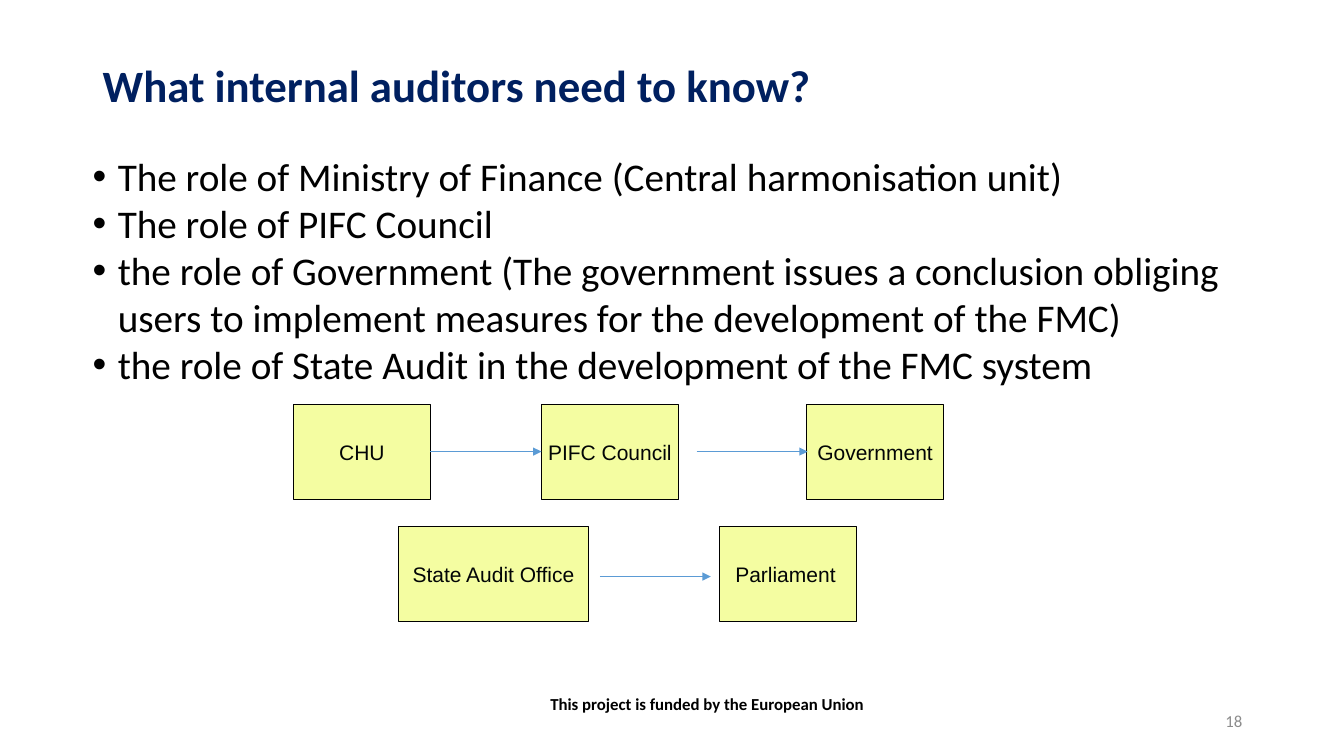
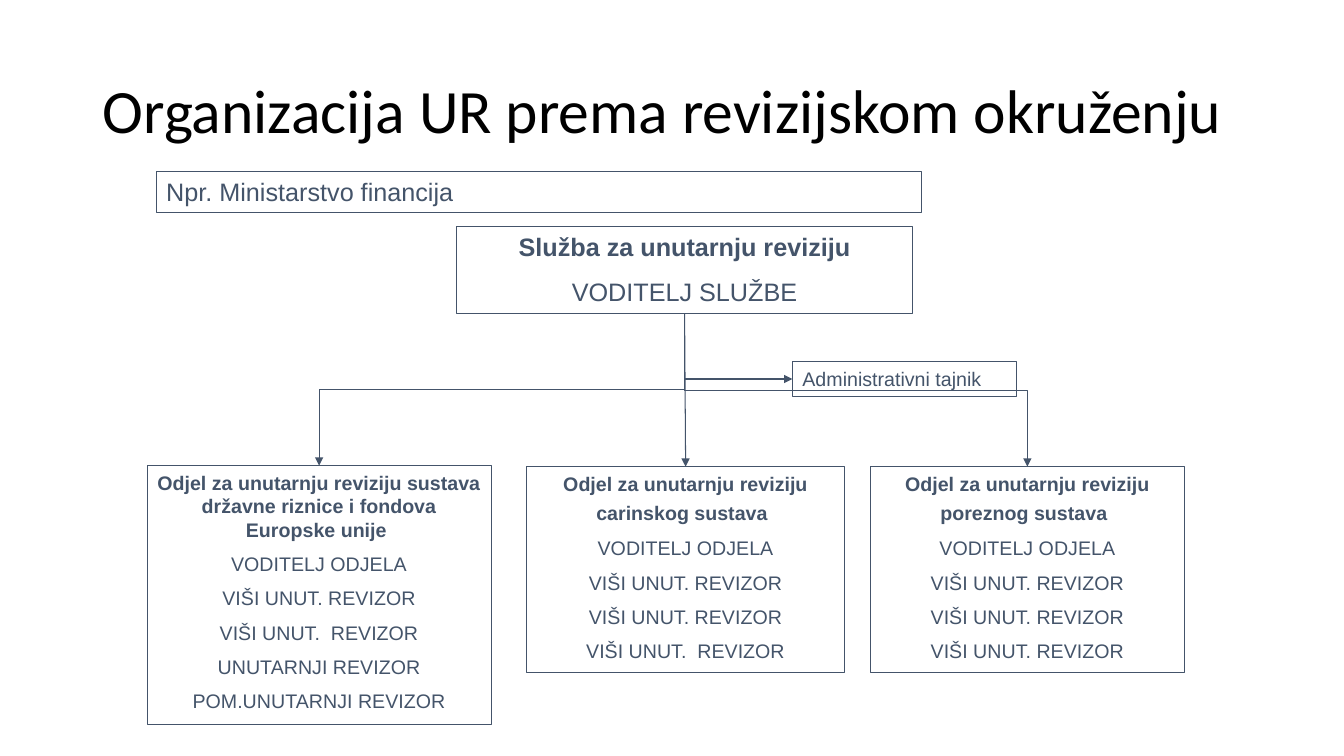
from lxml import etree
from pptx import Presentation
from pptx.dml.color import RGBColor
from pptx.enum.shapes import MSO_CONNECTOR as Connector, MSO_SHAPE as Shape
from pptx.enum.text import MSO_ANCHOR as Anchor, PP_ALIGN as Align
from pptx.oxml.ns import qn
from pptx.util import Pt

# Theme: lengths are px, 100 to the inch
PX = 9144
THEME = {
    "navy": "002060", "black": "000000", "grey": "8C8C8C", "ink": "020506",
    "slate": "44546A", "blue": "5B9BD5", "yellow": "F4FDA1",
    "head": "Calibri", "label": "Arial",
    "paragraph_gap": 0.55,  # space before, as a share of the type size
    "thin": 0.5, "line": 0.75,
}
STYLES = {
    "question": dict(font="head", size=32, color="navy", bold=True, anchor="MIDDLE", spacing=0.9),
    "title": dict(font="head", size=44, color="black", anchor="MIDDLE", spacing=0.9),
    "body": dict(font="head", size=28, color="black", bullet=True),
    "number": dict(font="head", size=12, color="grey", align="RIGHT", anchor="MIDDLE"),
    "footer": dict(font="head", size=12, color="black", bold=True, align="CENTER"),
    "flow": dict(font="label", size=15, color="ink", align="CENTER", anchor="MIDDLE",
                 wrap=False, fill="yellow", line=("black", THEME["line"])),
    "note": dict(font="label", size=18, color="slate", line=("slate", THEME["line"])),
    "assistant": dict(font="label", size=14, color="slate", line=("slate", THEME["line"])),
    "head_unit": dict(font="label", size=18, color="slate", align="CENTER", gap=True,
                      line=("slate", THEME["thin"])),
    "unit": dict(font="label", size=14, color="slate", align="CENTER", gap=True,
                 line=("slate", THEME["thin"])),
}

# Content of slide 1
QUESTION = "What internal auditors need to know?"
ROLES = [
    "The role of Ministry of Finance (Central harmonisation unit)",
    "The role of PIFC Council",
    "the role of Government (The government issues a conclusion obliging users "
    "to implement measures for the development of the FMC)",
    "the role of State Audit in the development of the FMC system",
]
FLOW_ROWS = [  # top, boxes (text, left, width)
    (401, [("CHU", 291, 136), ("PIFC Council", 537, 136), ("Government", 800, 136)]),
    (522, [("State Audit Office", 395, 189), ("Parliament ", 714, 136)]),
]
FLOW_HEIGHT = 95
FLOW_ARROWS = [(427, 448), (691, 448), (595, 572)]  # left, y
ARROW_LENGTH = 110
FOOTER = "This project is funded by the European Union"
NUMBER = "18"

# Content of slide 2
ORGANISATION = "Organizacija UR prema revizijskom okruženju"
EXAMPLE = "Npr. Ministarstvo financija"
SERVICE = ["Služba za unutarnju reviziju", "VODITELJ SLUŽBE"]
ASSISTANT = "Administrativni tajnik"
SENIOR, SENIOR_WIDE = "VIŠI UNUT. REVIZOR", "VIŠI UNUT.  REVIZOR"
SPACE = (" ", {"size": 18, "bold": False})
DEPARTMENTS = [  # box, heading runs, staff
    ((146, 462, 341, 257),
     ["Odjel za unutarnju reviziju sustava državne riznice i fondova Europske unije "],
     ["VODITELJ ODJELA", SENIOR, SENIOR_WIDE, "UNUTARNJI REVIZOR", "POM.UNUTARNJI REVIZOR"]),
    ((522, 463, 316, 204),
     ["Odjel za unutarnju reviziju carinskog sustava", SPACE],
     ["VODITELJ ODJELA", SENIOR, SENIOR, SENIOR_WIDE]),
    ((863, 463, 312, 204),
     ["Odjel za unutarnju reviziju poreznog sustava", SPACE],
     ["VODITELJ ODJELA", SENIOR, SENIOR, SENIOR]),
]
TOP, LEFT, BOTTOM = 0, 1, 2  # connection sites of a rectangle


def rgb(name):
    return RGBColor.from_string(THEME[name])


def emu(values):
    return [round(value * PX) for value in values]


def set_all(target, values):
    for name, value in values.items():
        setattr(target, name, value)


def add_bullet(paragraph):
    properties = paragraph._p.get_or_add_pPr()
    properties.set("marL", str(25 * PX))
    properties.set("indent", str(-25 * PX))
    etree.SubElement(properties, qn("a:buFont"), typeface="Arial")
    etree.SubElement(properties, qn("a:buChar"), char="•")


def add_text(slide, box, paragraphs, style_name):
    """Each paragraph is a string or a list of runs: text or (text, changes)."""
    style = STYLES[style_name]
    if "line" in style:
        shape = slide.shapes.add_shape(Shape.RECTANGLE, *emu(box))
        shape.shadow.inherit = False
        color, width = style["line"]
        shape.line.color.rgb = rgb(color)
        shape.line.width = Pt(width)
        if "fill" in style:
            shape.fill.solid()
            shape.fill.fore_color.rgb = rgb(style["fill"])
        else:
            shape.fill.background()
    else:
        shape = slide.shapes.add_textbox(*emu(box))
    frame = shape.text_frame
    set_all(frame, {"word_wrap": style.get("wrap", True),
                    "vertical_anchor": Anchor[style.get("anchor", "TOP")]})
    for index, runs in enumerate(paragraphs):
        paragraph = frame.add_paragraph() if index else frame.paragraphs[0]
        set_all(paragraph, {"alignment": Align[style.get("align", "LEFT")],
                            "line_spacing": style.get("spacing", 1.0)})
        if index and style.get("gap"):
            paragraph.space_before = Pt(style["size"] * THEME["paragraph_gap"])
        if style.get("bullet"):
            add_bullet(paragraph)
        for item in [runs] if isinstance(runs, str) else runs:
            text, changes = (item, {}) if isinstance(item, str) else item
            look = {**style, **changes}
            run = paragraph.add_run()
            run.text = text
            set_all(run.font, {"name": THEME[look["font"]], "size": Pt(look["size"]),
                               "bold": look.get("bold", False)})
            run.font.color.rgb = rgb(look["color"])
    return shape


def add_arrow(slide, start, end, color, width, kind=Connector.STRAIGHT):
    arrow = slide.shapes.add_connector(kind, *emu((*start, *end)))
    arrow.line.color.rgb = rgb(color)
    arrow.line.width = Pt(width)
    etree.SubElement(arrow.line._get_or_add_ln(), qn("a:tailEnd"), type="triangle")
    etree.SubElement(arrow._element.spPr, qn("a:effectLst"))
    return arrow


def site_point(shape, site):
    x = shape.left if site == LEFT else shape.left + shape.width / 2
    y = {TOP: shape.top, LEFT: shape.top + shape.height / 2,
         BOTTOM: shape.top + shape.height}[site]
    return x / PX, y / PX


def link(slide, parent, child, site, preset):
    """Arrow from the bottom of parent to a site of child; elbows leave downwards."""
    start, end = site_point(parent, BOTTOM), site_point(child, site)
    straight = preset == "line"
    kind = Connector.STRAIGHT if straight else Connector.ELBOW
    arrow = add_arrow(slide, start, end, "slate", THEME["line"], kind)
    arrow.begin_connect(parent, BOTTOM)
    arrow.end_connect(child, site)
    if straight:
        return
    # Turn the elbow a quarter so that its first leg is vertical
    across, down = end[0] - start[0], end[1] - start[1]
    middle_x, middle_y = (start[0] + end[0]) / 2, (start[1] + end[1]) / 2
    frame = emu((middle_x - down / 2, middle_y - abs(across) / 2, down, abs(across)))
    set_all(arrow, dict(zip(("left", "top", "width", "height"), frame)))
    properties = arrow._element.spPr
    transform = properties.find(qn("a:xfrm"))
    transform.attrib.clear()
    transform.set("rot", str((270 if across > 0 else 90) * 60000))
    if across > 0:
        transform.set("flipH", "1")
    properties.find(qn("a:prstGeom")).set("prst", preset)


def add_title(slide, text, style_name, height):
    add_text(slide, (92, 40, 1150, height), [text], style_name)


def build_roles(slide):
    add_title(slide, QUESTION, "question", 94)
    add_text(slide, (82, 146, 1150, 530), ROLES, "body")
    add_text(slide, (942, 695, 300, 40), [NUMBER], "number")
    add_text(slide, (528, 683, 347, 30), [FOOTER], "footer")
    for top, boxes in FLOW_ROWS:
        for text, left, width in boxes:
            add_text(slide, (left, top, width, FLOW_HEIGHT), [text], "flow")
    for left, y in FLOW_ARROWS:
        add_arrow(slide, (left, y), (left + ARROW_LENGTH, y), "blue", THEME["thin"])


def build_organisation(slide):
    add_title(slide, ORGANISATION, "title", 145)
    add_text(slide, (155, 170, 759, 41), [EXAMPLE], "note")
    heading, leader = SERVICE
    service = add_text(slide, (453, 225, 452, 86),
                       [[(heading, {"bold": True})], leader], "head_unit")
    assistant = add_text(slide, (786, 359, 222, 34), [ASSISTANT], "assistant")
    link(slide, service, assistant, LEFT, "bentConnector2")
    for box, (name, *rest), staff in DEPARTMENTS:
        department = add_text(slide, box, [[(name, {"bold": True}), *rest], *staff], "unit")
        offset = site_point(department, TOP)[0] - site_point(service, BOTTOM)[0]
        link(slide, service, department, TOP,
             "line" if abs(offset) < 2 else "bentConnector3")


def main():
    presentation = Presentation()
    set_all(presentation, {"slide_width": 1333 * PX, "slide_height": 750 * PX})
    blank = presentation.slide_layouts[6]
    for build in (build_roles, build_organisation):
        build(presentation.slides.add_slide(blank))
    presentation.save("out.pptx")


if __name__ == "__main__":
    main()
